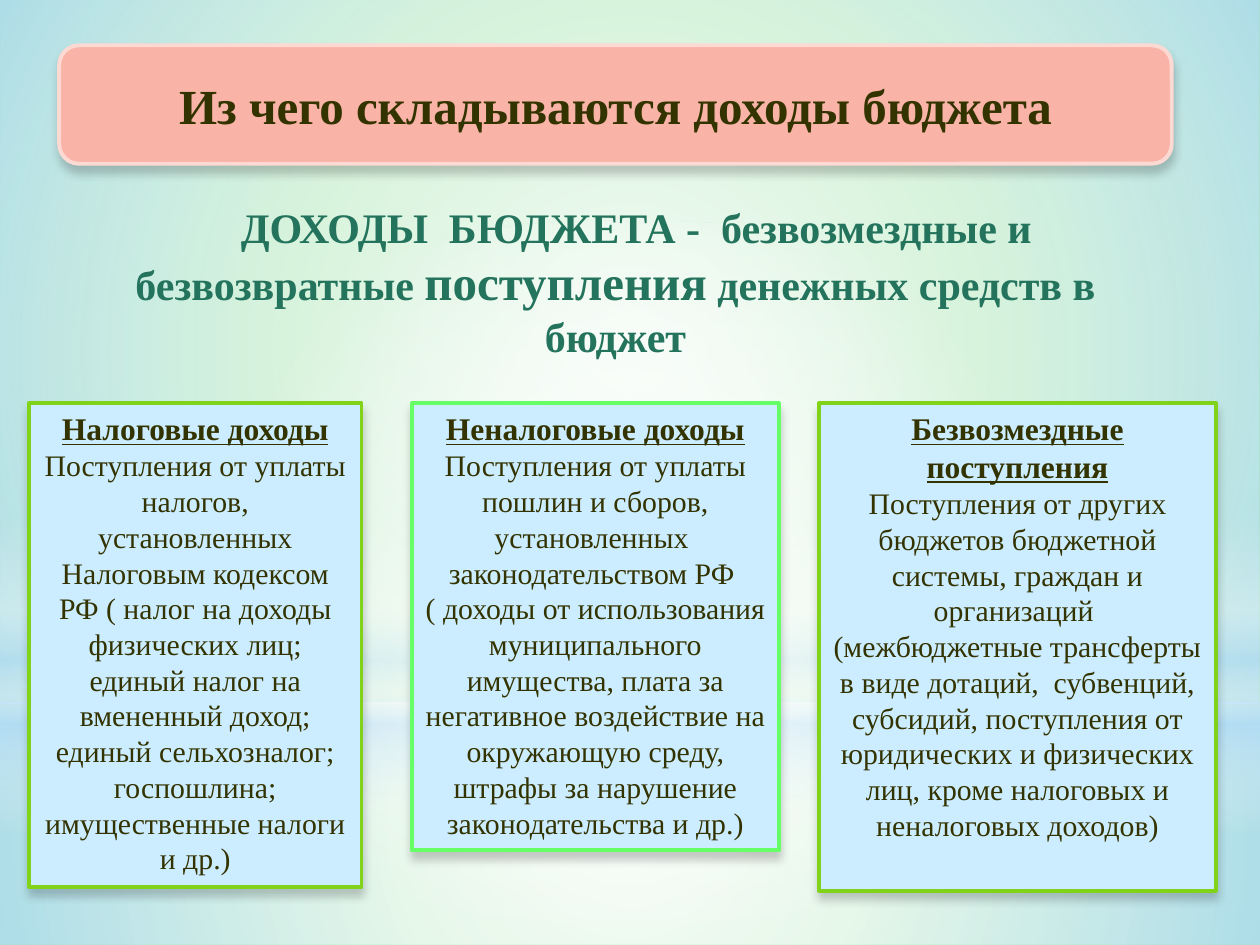
from pptx import Presentation
from pptx.dml.color import RGBColor
from pptx.enum.shapes import MSO_SHAPE
from pptx.enum.text import MSO_ANCHOR, PP_ALIGN
from pptx.oxml import parse_xml
from pptx.oxml.ns import nsdecls, qn
from pptx.util import Inches, Pt

FONT = "Times New Roman"
GREEN = RGBColor(0x97, 0xE1, 0xA3)
WHITE = RGBColor(0xFF, 0xFF, 0xFF)
SKY = RGBColor(0xB4, 0xDC, 0xFA)
CORAL = RGBColor(0xF9, 0xB3, 0xA7)
BLUSH = RGBColor(0xFC, 0xD9, 0xD3)
PALE = RGBColor(0xCC, 0xEC, 0xFF)
LIME = RGBColor(0x81, 0xD3, 0x1A)
MINT = RGBColor(0x66, 0xFF, 0x66)
DARK = RGBColor(0x33, 0x33, 0x00)
TEAL = RGBColor(0x23, 0x73, 0x5D)

# Heading, body paragraphs, left, width, height, border
CARDS = [
    ("Налоговые доходы",
     ["Поступления от уплаты налогов, установленных Налоговым кодексом РФ "
      "( налог на доходы физических лиц; единый налог на вмененный доход; "
      "единый сельхозналог; госпошлина; имущественные налоги и др.)"],
     0.23, 2.64, 3.84, LIME),
    ("Неналоговые доходы",
     ["Поступления от уплаты пошлин и сборов, установленных  "
      "законодательством РФ ",
      "( доходы от использования муниципального имущества, плата за "
      "негативное воздействие на окружающую среду, штрафы за нарушение "
      "законодательства и др.)"],
     3.27, 2.91, 3.55, MINT),
    ("Безвозмездные поступления",
     ["Поступления от других бюджетов бюджетной системы, граждан и "
      "организаций ",
      "(межбюджетные трансферты в виде дотаций,  субвенций, субсидий, "
      "поступления от юридических и физических лиц, кроме налоговых и "
      "неналоговых доходов)"],
     6.5, 3.15, 3.87, LIME),
]


def write(para, text, size=17, color=DARK, bold=False, under=False):
    """Add one formatted run to a centred paragraph."""
    para.alignment = PP_ALIGN.CENTER
    run = para.add_run()
    run.text = text
    font = run.font
    font.name, font.size, font.bold = FONT, Pt(size), bold
    font.underline = under
    font.color.rgb = color


def shade(shape):
    """Give a shape a soft shadow below it."""
    shape.shadow.inherit = False
    effects = shape._element.spPr.find(qn("a:effectLst"))
    effects.append(parse_xml(
        f'<a:outerShdw {nsdecls("a")} blurRad="{Pt(5)}" dist="{Pt(4)}" '
        'dir="5400000" algn="t" rotWithShape="0"><a:srgbClr val="000000">'
        '<a:alpha val="20000"/></a:srgbClr></a:outerShdw>'))


def panel(slide, kind, box, fill, line):
    """Add a filled, outlined and shadowed shape."""
    shape = slide.shapes.add_shape(kind, *map(Inches, box))
    shape.fill.solid()
    shape.fill.fore_color.rgb = fill
    shape.line.color.rgb = line
    shape.line.width = Pt(2.25)
    shade(shape)
    shape.text_frame.word_wrap = True
    return shape


def glow(slide, box, stops, kind=MSO_SHAPE.RECTANGLE, angle=None):
    """Add a translucent gradient; stops are (place, colour, opacity)."""
    shape = slide.shapes.add_shape(kind, *map(Inches, box))
    shape.shadow.inherit = False
    shape.line.fill.background()
    shape.fill.background()
    marks = "".join(
        f'<a:gs pos="{place * 1000}"><a:srgbClr val="{color}">'
        f'<a:alpha val="{alpha * 1000}"/></a:srgbClr></a:gs>'
        for place, color, alpha in stops)
    if angle is None:
        way = ('<a:path path="circle"><a:fillToRect l="50000" t="50000" '
               'r="50000" b="50000"/></a:path>')
    else:
        way = f'<a:lin ang="{angle * 60000}" scaled="0"/>'
    props = shape._element.spPr
    props.replace(props.find(qn("a:noFill")), parse_xml(
        f'<a:gradFill {nsdecls("a")} rotWithShape="1">'
        f'<a:gsLst>{marks}</a:gsLst>{way}</a:gradFill>'))


def backdrop(slide, width, height):
    """Layer the glows over a green ground."""
    slide.background.fill.solid()
    slide.background.fill.fore_color.rgb = GREEN
    split = 5.58
    glow(slide, (0, split, width, height - split),
         [(0, WHITE, 91), (37, WHITE, 76), (100, SKY, 79)])
    glow(slide, (0, 0, width, split),
         [(0, WHITE, 89), (48, WHITE, 62), (100, SKY, 79)])
    glow(slide, (0, 4.12, width, 2.5),
         [(0, WHITE, 0), (29, WHITE, 30), (45, SKY, 40),
          (55, WHITE, 26), (65, SKY, 60), (100, WHITE, 0)], angle=90)
    glow(slide, (0, 1.75, width, split),
         [(0, WHITE, 100), (56, WHITE, 0)], kind=MSO_SHAPE.OVAL)


def title(slide, box):
    shape = panel(slide, MSO_SHAPE.ROUNDED_RECTANGLE, box, CORAL, BLUSH)
    frame = shape.text_frame
    frame.vertical_anchor = MSO_ANCHOR.MIDDLE
    write(frame.paragraphs[0], "Из чего складываются доходы бюджета",
          size=28, bold=True)


def meaning(slide, box):
    """Add the definition of budget income."""
    frame = slide.shapes.add_textbox(*map(Inches, box)).text_frame
    frame.word_wrap = True
    para = frame.paragraphs[0]
    para._p.get_or_add_pPr().set("indent", str(Inches(0.33)))
    for text, size in [
            ("ДОХОДЫ  БЮДЖЕТА -  безвозмездные и безвозвратные ", 24),
            ("поступления", 28),
            (" денежных средств в бюджет", 24)]:
        write(para, text, size=size, color=TEAL, bold=True)


def card(slide, box, head, body, line):
    """Add one kind of income: underlined heading and body."""
    shape = panel(slide, MSO_SHAPE.RECTANGLE, box, PALE, line)
    frame = shape.text_frame
    frame.vertical_anchor = MSO_ANCHOR.TOP
    write(frame.paragraphs[0], head, size=18, bold=True, under=True)
    for text in body:
        write(frame.add_paragraph(), text)


def main():
    deck = Presentation()
    deck.slide_width, deck.slide_height = Inches(10), Inches(7.5)
    slide = deck.slides.add_slide(deck.slide_layouts[6])
    backdrop(slide, 10, 7.5)
    title(slide, (0.47, 0.36, 8.83, 0.94))
    for head, body, left, width, height, line in CARDS:
        card(slide, (left, 3.2, width, height), head, body, line)
    meaning(slide, (0.77, 1.55, 8.23, 1.38))
    deck.save("out.pptx")


if __name__ == "__main__":
    main()
